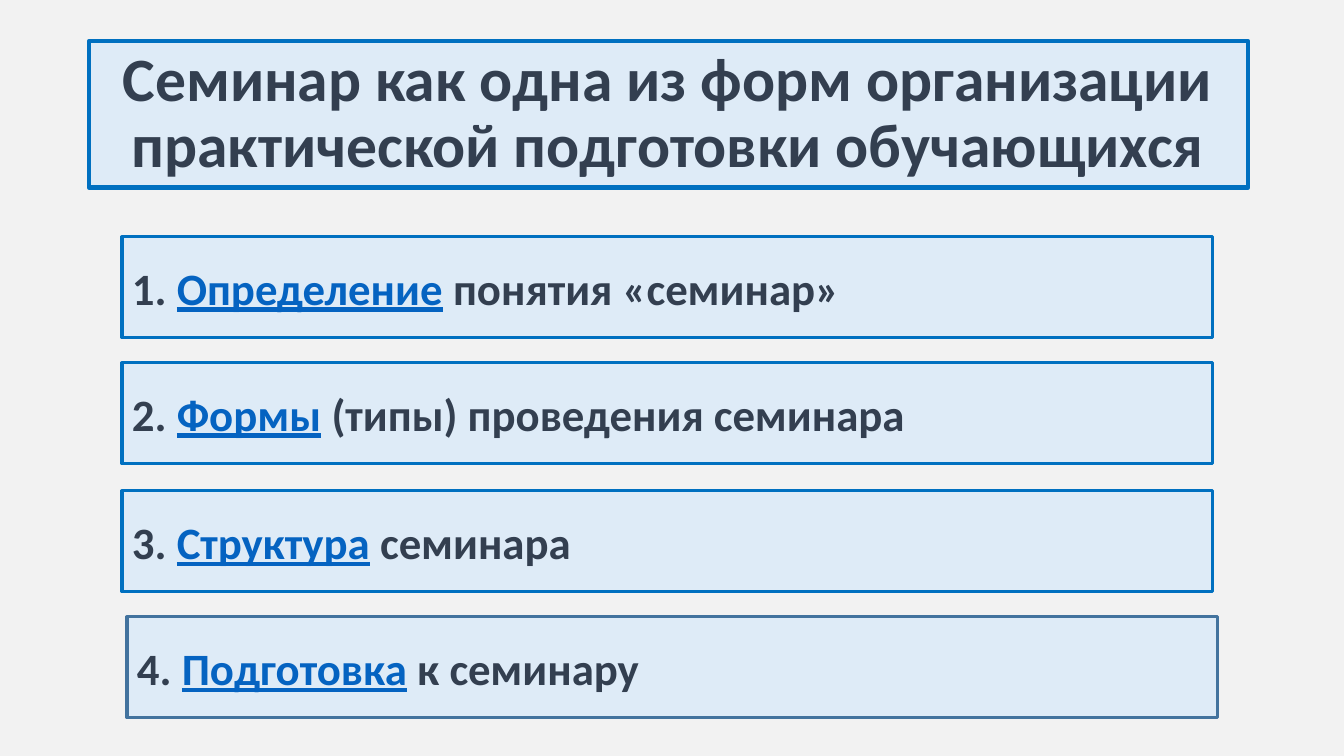
from dataclasses import dataclass

from pptx import Presentation
from pptx.dml.color import RGBColor as RGB
from pptx.enum.shapes import MSO_SHAPE as SHAPE
from pptx.enum.text import MSO_ANCHOR as ANCHOR, MSO_AUTO_SIZE as AUTO, PP_ALIGN as ALIGN
from pptx.util import Inches, Pt


@dataclass(frozen=True)
class Theme:
    background: RGB = RGB.from_string("F2F2F2")
    panel: RGB = RGB.from_string("DEEBF7")
    border: RGB = RGB.from_string("0070C0")
    last_border: RGB = RGB.from_string("43739E")
    text: RGB = RGB.from_string("333F50")
    keyword: RGB = RGB.from_string("0563C1")
    font: str = "Calibri"
    title_size: Pt = Pt(44)
    item_size: Pt = Pt(32)


theme = Theme()


def style_panel(shape, border, width):
    shape.fill.solid()
    shape.fill.fore_color.rgb = theme.panel
    shape.line.color.rgb = border
    shape.line.width = Pt(width)
    tf = shape.text_frame
    tf.word_wrap = True
    tf.auto_size = AUTO.NONE
    tf.vertical_anchor = ANCHOR.MIDDLE
    return tf


def style_run(r, size, color):
    r.font.name = theme.font
    r.font.size = size
    r.font.bold = True
    r.font.color.rgb = color


prs = Presentation()
prs.slide_width, prs.slide_height = Inches(13.33), Inches(7.5)
s = prs.slides.add_slide(prs.slide_layouts[5])
s.background.fill.solid()
s.background.fill.fore_color.rgb = theme.background

# Title
title = s.shapes.title
title.left, title.top = Inches(0.88), Inches(0.41)
title.width, title.height = Inches(11.5), Inches(1.45)
tf = style_panel(title, theme.border, 3)
tf.text = "Семинар как одна из форм организации практической подготовки обучающихся"
p = tf.paragraphs[0]
p.alignment = ALIGN.CENTER
p.line_spacing = 0.9
style_run(p.runs[0], theme.title_size, theme.text)

# Seminar topics: left, top, border, alignment, keyword, rest of the wording
topics = [
    (1.21, 2.35, theme.border, ALIGN.JUSTIFY, "Определение", " понятия «семинар»"),
    (1.21, 3.6, theme.border, ALIGN.JUSTIFY, "Формы", " (типы) проведения семинара"),
    (1.21, 4.87, theme.border, ALIGN.LEFT, "Структура", " семинара"),
    (1.26, 6.12, theme.last_border, ALIGN.LEFT, "Подготовка", " к семинару"),
]
for number, (left, top, border, align, keyword, rest) in enumerate(topics, 1):
    sp = s.shapes.add_shape(SHAPE.RECTANGLE, Inches(left), Inches(top), Inches(10.82), Inches(1))
    sp.shadow.inherit = False
    p = style_panel(sp, border, 2.25).paragraphs[0]
    p.alignment = align
    for text in (f"{number}. ", keyword, rest):
        r = p.add_run()
        r.text = text
        is_keyword = text == keyword
        style_run(r, theme.item_size, theme.keyword if is_keyword else theme.text)
        r.font.underline = is_keyword

prs.save("out.pptx")
